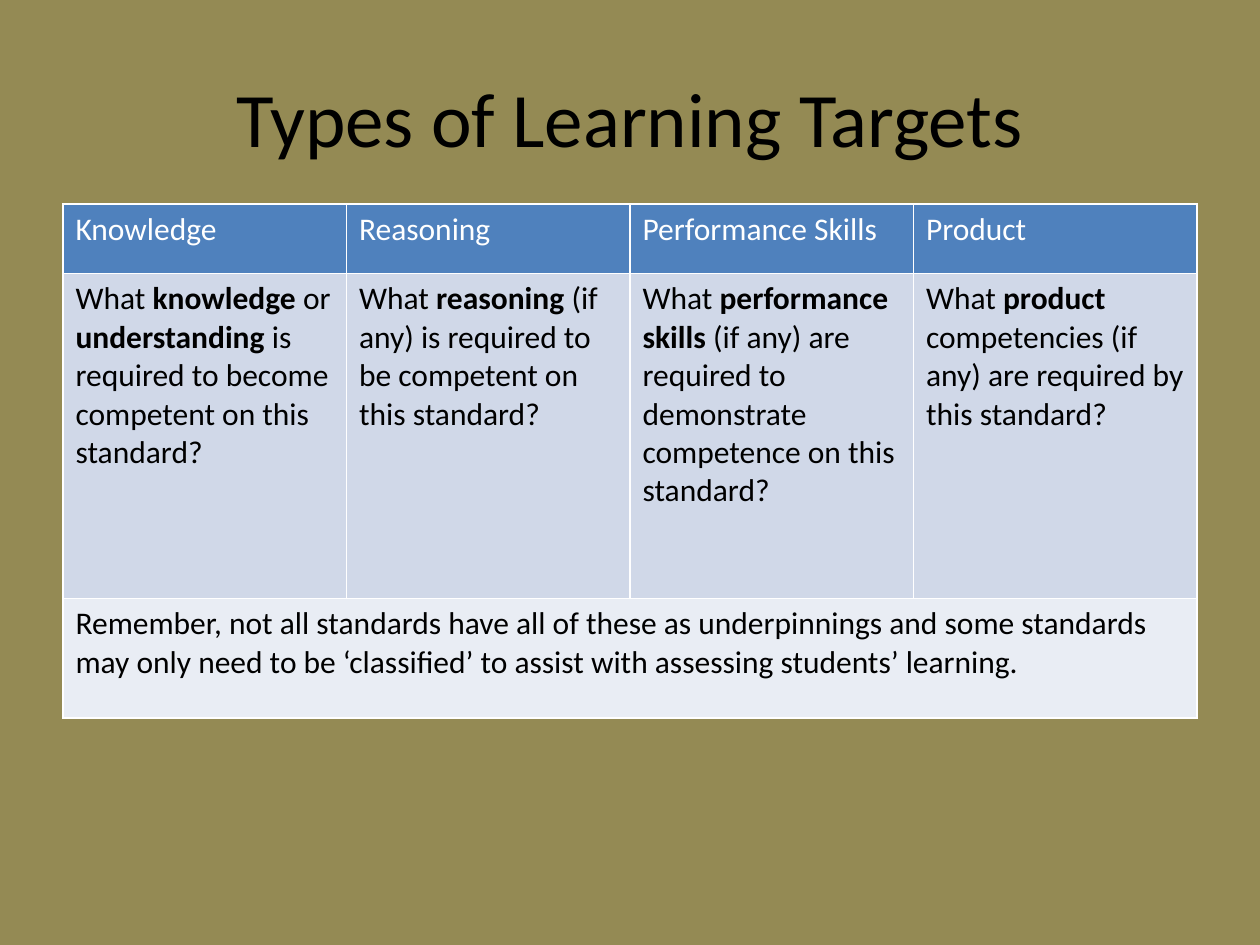
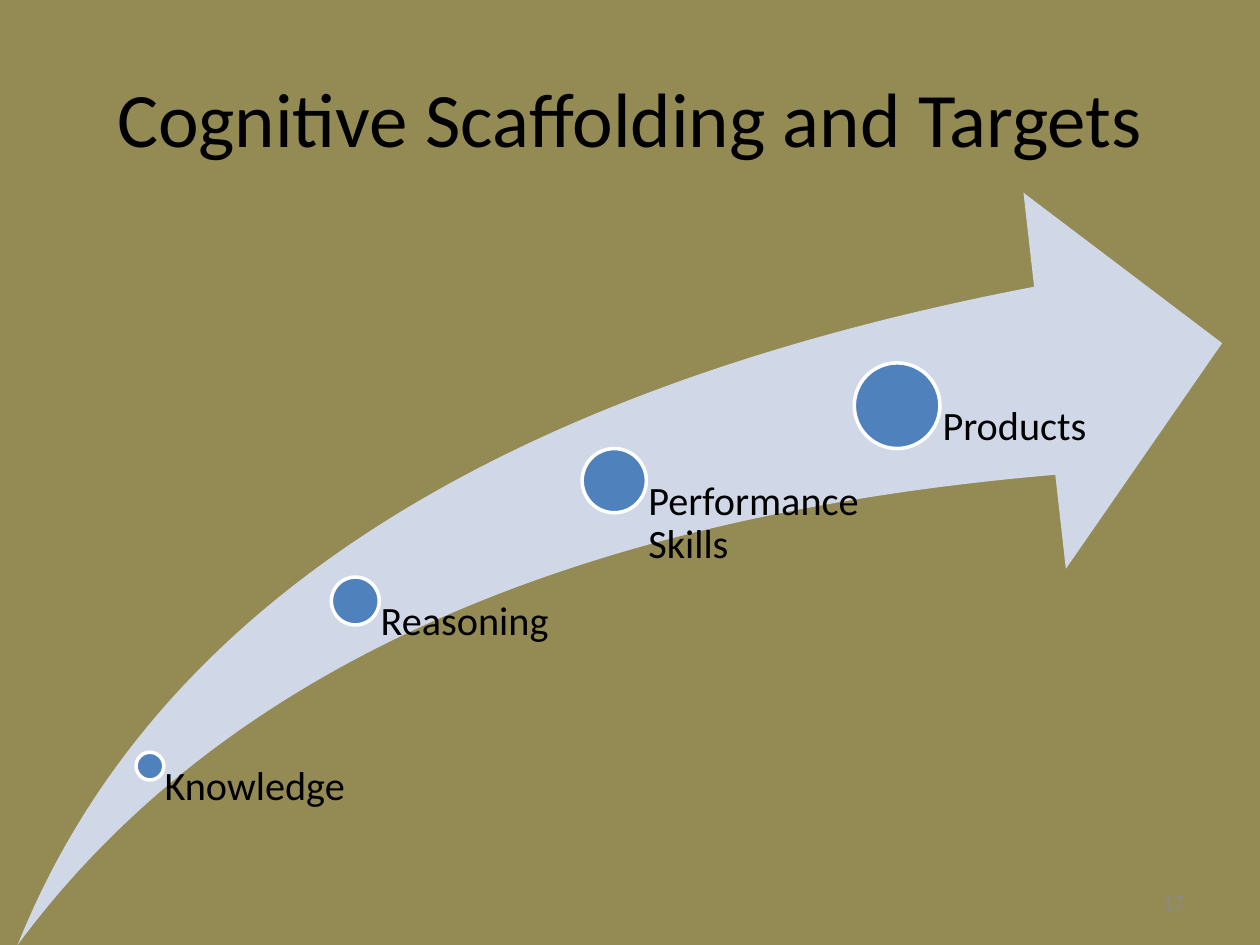
from pptx import Presentation
from pptx.dml.color import RGBColor
from pptx.enum.shapes import MSO_SHAPE
from pptx.enum.text import MSO_ANCHOR, PP_ALIGN
from pptx.util import Inches, Pt

OLIVE = RGBColor(0x94, 0x8A, 0x54)
BLUE = RGBColor(0x4F, 0x81, 0xBD)
PALE_BLUE = RGBColor(0xD0, 0xD8, 0xE8)
PALEST_BLUE = RGBColor(0xE9, 0xED, 0xF4)
WHITE = RGBColor(0xFF, 0xFF, 0xFF)
BLACK = RGBColor(0, 0, 0)
GREY = RGBColor(0x8B, 0x8B, 0x8B)

FONT = "Calibri"
SLIDE_WIDTH, SLIDE_HEIGHT = 10, 7.5
TITLE_ONLY = 5

TARGETS = ["Knowledge", "Reasoning", "Performance Skills", "Product"]
# Each question is a list of paragraphs; each paragraph a list of (text, bold)
QUESTIONS = [
    [[("What ", False), ("knowledge ", True), ("or ", False), ("understanding ", True),
      ("is required to become competent on this standard?", False)]],
    [[("What ", False), ("reasoning ", True),
      ("(if any) is required to be competent on this standard?", False)]],
    [[("What ", False), ("performance skills ", True),
      ("(if any) are required to demonstrate competence on this", False)],
     [("standard?", False)]],
    [[("What ", False), ("product ", True),
      ("competencies (if any) are required by this standard?", False)]],
]
REMINDER = ("Remember, not all standards have all of these as underpinnings and some "
            "standards may only need to be ‘classified’ to assist with assessing "
            "students’ learning.")

# Label, circle left, circle top, circle diameter, label width
STEPS = [
    ("Knowledge", 1.08, 5.97, 0.22, 1.63),
    ("Reasoning", 2.63, 4.58, 0.38, 2.01),
    ("Performance Skills", 4.62, 3.56, 0.51, 2.01),
    ("Products", 6.78, 2.88, 0.68, 2.01),
]
LABEL_INSET_RATIO = 0.53


class Builder:
    """Holds the shared style and the current slide."""

    def __init__(self):
        self.deck = Presentation()
        self.deck.slide_width = Inches(SLIDE_WIDTH)
        self.deck.slide_height = Inches(SLIDE_HEIGHT)
        background = self.deck.slide_master.background.fill
        background.solid()
        background.fore_color.rgb = OLIVE
        self.slide = None

    def style(self, span, size, color, bold=False):
        span.font.name = FONT
        span.font.size = Pt(size)
        span.font.color.rgb = color
        span.font.bold = bold

    def new_slide(self, title):
        self.slide = self.deck.slides.add_slide(self.deck.slide_layouts[TITLE_ONLY])
        box = self.slide.shapes.title
        box.left, box.top, box.width, box.height = map(Inches, (0.5, 0.3, 9, 1.25))
        box.text_frame.text = title
        box.text_frame.vertical_anchor = MSO_ANCHOR.MIDDLE
        para = box.text_frame.paragraphs[0]
        para.alignment = PP_ALIGN.CENTER
        self.style(para.runs[0], 44, BLACK)

    def table(self, left, top, width, row_heights, columns):
        frame = self.slide.shapes.add_table(
            len(row_heights), columns, Inches(left), Inches(top),
            Inches(width), Inches(sum(row_heights)))
        for row, height in zip(frame.table.rows, row_heights):
            row.height = Inches(height)
        return frame.table

    def cell(self, cell, paragraphs, fill, color=BLACK):
        cell.fill.solid()
        cell.fill.fore_color.rgb = fill
        frame = cell.text_frame
        for index, spans in enumerate(paragraphs):
            para = frame.add_paragraph() if index else frame.paragraphs[0]
            for text, bold in spans:
                span = para.add_run()
                span.text = text
                self.style(span, 18, color, bold)

    def shape(self, kind, left, top, width, height, fill, line=None):
        shape = self.slide.shapes.add_shape(
            kind, Inches(left), Inches(top), Inches(width), Inches(height))
        shape.shadow.inherit = False
        shape.fill.solid()
        shape.fill.fore_color.rgb = fill
        if line is None:
            shape.line.fill.background()
        else:
            shape.line.color.rgb = line
            shape.line.width = Pt(2)
        return shape

    def text(self, text, left, top, width, height, size, color, inset=0.0):
        box = self.slide.shapes.add_textbox(
            Inches(left), Inches(top), Inches(width), Inches(height))
        frame = box.text_frame
        frame.word_wrap = True
        frame.margin_left = Inches(inset)
        frame.margin_top = frame.margin_right = frame.margin_bottom = 0
        frame.text = text
        para = frame.paragraphs[0]
        self.style(para.runs[0], size, color)
        return para

    def step(self, label, left, top, diameter, label_width):
        self.shape(MSO_SHAPE.OVAL, left, top, diameter, diameter, BLUE, WHITE)
        # The label box starts at the centre of the circle and runs to the slide's foot
        center_x, center_y = left + diameter / 2, top + diameter / 2
        para = self.text(label, center_x, center_y, label_width, SLIDE_HEIGHT - center_y,
                         23, BLACK, diameter * LABEL_INSET_RATIO)
        para.line_spacing = 0.9

    def page_number(self, number):
        para = self.text(str(number), 7.17, 7.06, 2.23, 0.2, 12, GREY)
        para.alignment = PP_ALIGN.RIGHT


def main():
    builder = Builder()

    # Table of learning targets
    builder.new_slide("Types of Learning Targets")
    table = builder.table(0.5, 1.62, 9, (0.55, 2.58, 0.95), len(TARGETS))
    for column, (target, question) in enumerate(zip(TARGETS, QUESTIONS)):
        builder.cell(table.cell(0, column), [[(target, False)]], BLUE, WHITE)
        builder.cell(table.cell(1, column), question, PALE_BLUE)
    table.cell(2, 0).merge(table.cell(2, len(TARGETS) - 1))
    builder.cell(table.cell(2, 0), [[(REMINDER, False)]], PALEST_BLUE)

    # Rising arrow with its steps
    builder.new_slide("Cognitive Scaffolding and Targets")
    arrow = builder.shape(MSO_SHAPE.SWOOSH_ARROW, 0.14, 1.53, 9.56, 5.97, PALE_BLUE)
    arrow.adjustments[0] = arrow.adjustments[1] = 0.25
    for step in STEPS:
        builder.step(*step)
    builder.page_number(17)

    builder.deck.save("out.pptx")


if __name__ == "__main__":
    main()
